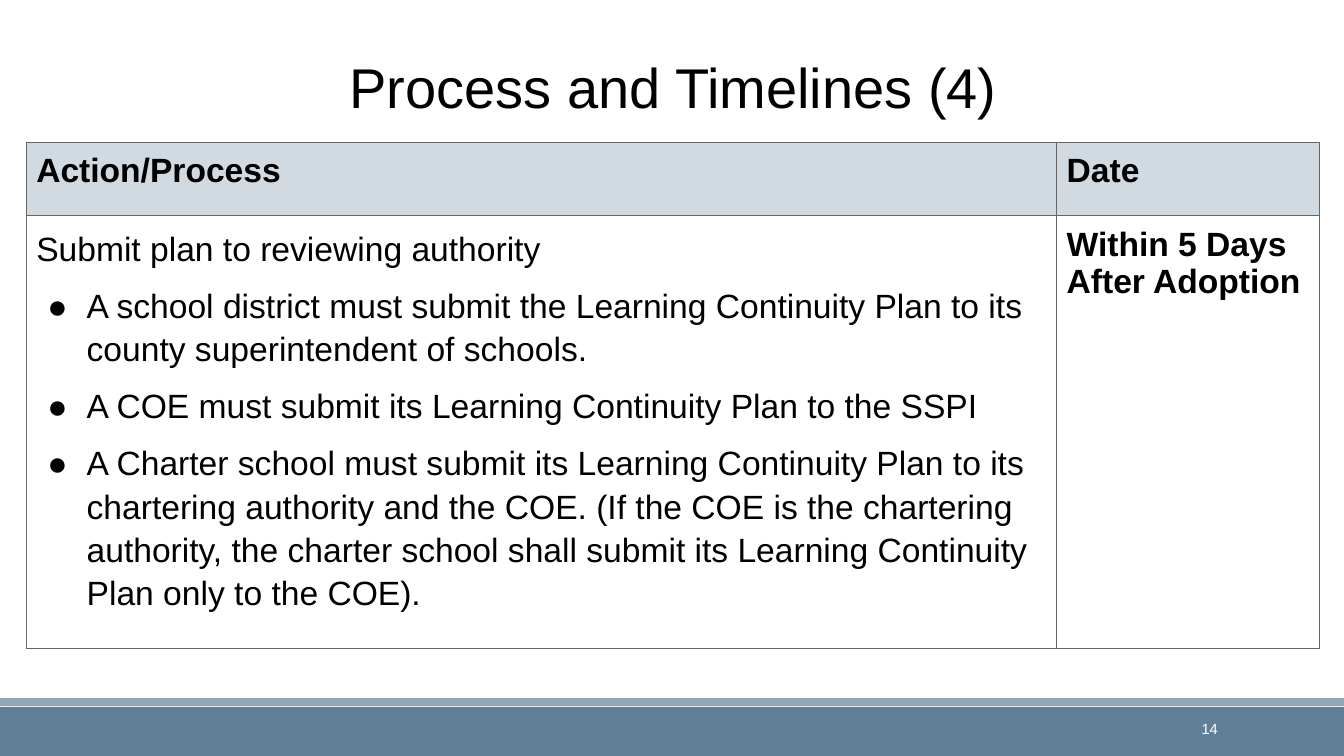
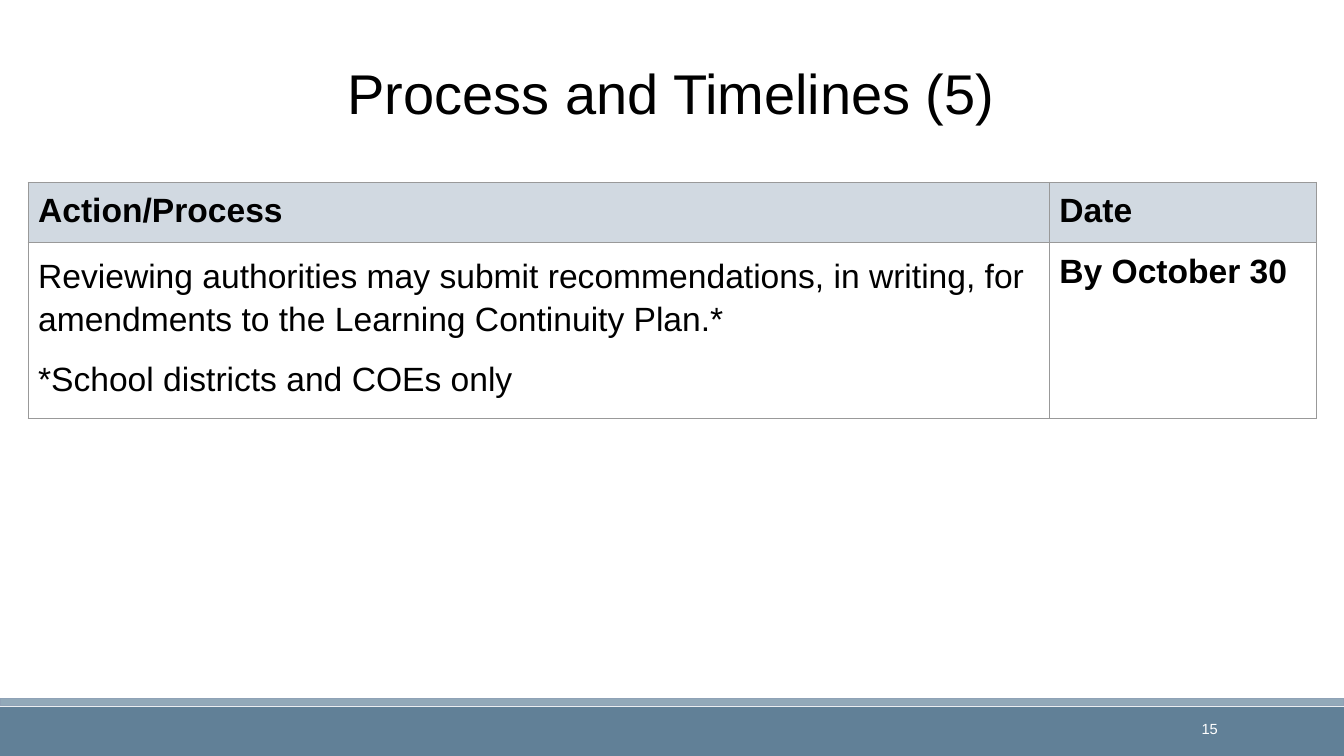
from lxml import etree
from pptx import Presentation
from pptx.dml.color import RGBColor
from pptx.enum.shapes import MSO_SHAPE
from pptx.enum.text import MSO_ANCHOR, PP_ALIGN
from pptx.oxml.ns import qn
from pptx.util import Pt

RECTANGLE = MSO_SHAPE.RECTANGLE
MIDDLE, BOTTOM = MSO_ANCHOR.MIDDLE, MSO_ANCHOR.BOTTOM
CENTER, RIGHT = PP_ALIGN.CENTER, PP_ALIGN.RIGHT

BLACK = RGBColor(0x00, 0x00, 0x00)
WHITE = RGBColor(0xFF, 0xFF, 0xFF)
FOOTER_BLUE = RGBColor(0x61, 0x80, 0x97)
STRIP_BLUE = RGBColor(0x92, 0xA9, 0xB9)
STRIP_EDGE = RGBColor(0x8F, 0xA2, 0xB6)
HEADER_FILL = RGBColor(0xD1, 0xD9, 0xE1)
DARK_GRAY = RGBColor(0x66, 0x66, 0x66)
LIGHT_GRAY = RGBColor(0x99, 0x99, 0x99)

FONT = "Arial"
SLIDE_WIDTH, SLIDE_HEIGHT = 960, 540
FOOTER_TOP, STRIP_TOP = 505, 499
CELL_INSET = 7.2
BULLET_INDENT, BULLET_HANG = 36, 28

HEADERS = ("Action/Process", "Date")
# Each action paragraph is (text, bulleted, space before in points).
SLIDES = [
    {
        "title": "Process and Timelines (4)",
        "title_box": (18.72, 10, 924, 79.2),
        "number": "14",
        "table_at": (18.72, 101.5),
        "columns": (736, 188),
        "rows": (52.5, 291),
        "border": DARK_GRAY,
        "action": [
            ("Submit plan to reviewing authority", False, 0),
            ("A school district must submit the Learning Continuity Plan to its "
             "county superintendent of schools.", True, 10),
            ("A COE must submit its Learning Continuity Plan to the SSPI", True, 10),
            ("A Charter school must submit its Learning Continuity Plan to its "
             "chartering authority and the COE. (If the COE is the chartering "
             "authority, the charter school shall submit its Learning Continuity "
             "Plan only to the COE).", True, 10),
        ],
        "date": "Within 5 Days After Adoption",
    },
    {
        "title": "Process and Timelines (5)",
        "title_box": (15.84, 14.4, 926.6, 79.2),
        "number": "15",
        "table_at": (20, 130.2),
        "columns": (729.5, 191),
        "rows": (41.2, 118.5),
        "border": LIGHT_GRAY,
        "action": [
            ("Reviewing authorities may submit recommendations, in writing, for "
             "amendments to the Learning Continuity Plan.*", False, 0),
            ("*School districts and COEs only", False, 12),
        ],
        "date": "By October 30",
    },
]


def add_span(para, text, size, color=BLACK, bold=False):
    span = para.add_run()
    span.text = text
    span.font.name = FONT
    span.font.size = Pt(size)
    span.font.bold = bold
    span.font.color.rgb = color


def add_band(page, top, height, color):
    band = page.shapes.add_shape(RECTANGLE, 0, Pt(top), Pt(SLIDE_WIDTH), Pt(height))
    band.shadow.inherit = False
    band.fill.solid()
    band.fill.fore_color.rgb = color
    band.line.fill.background()
    return band


def add_text(page, place, text, size, color, align, anchor):
    box = page.shapes.add_textbox(*map(Pt, place))
    frame = box.text_frame
    frame.word_wrap = True
    frame.vertical_anchor = anchor
    para = frame.paragraphs[0]
    para.alignment = align
    add_span(para, text, size, color)
    return para


def add_bullet(para):
    properties = para._p.get_or_add_pPr()
    properties.set("marL", str(Pt(BULLET_INDENT)))
    properties.set("indent", str(-Pt(BULLET_HANG)))
    color = etree.SubElement(properties, qn("a:buClr"))
    etree.SubElement(color, qn("a:srgbClr"), val=str(BLACK))
    etree.SubElement(properties, qn("a:buFont"), typeface=FONT)
    etree.SubElement(properties, qn("a:buChar"), char="●")


def style_cell(cell, border, fill=None):
    """Set insets, then the four borders, which must precede the fill in the XML."""
    cell.margin_left = cell.margin_right = Pt(CELL_INSET)
    cell.margin_top = cell.margin_bottom = Pt(CELL_INSET)
    properties = cell._tc.get_or_add_tcPr()
    for side in ("lnL", "lnR", "lnT", "lnB"):
        line = etree.SubElement(properties, qn(f"a:{side}"), w=str(Pt(0.75)))
        solid = etree.SubElement(line, qn("a:solidFill"))
        etree.SubElement(solid, qn("a:srgbClr"), val=str(border))
    if fill is None:
        cell.fill.background()
    else:
        cell.fill.solid()
        cell.fill.fore_color.rgb = fill


def add_timeline(page, content):
    columns, rows = content["columns"], content["rows"]
    left, top = content["table_at"]
    table = page.shapes.add_table(len(rows), len(columns), Pt(left), Pt(top),
                                  Pt(sum(columns)), Pt(sum(rows))).table
    table.horz_banding = False
    for column, width in zip(table.columns, columns):
        column.width = Pt(width)
    for row, height in zip(table.rows, rows):
        row.height = Pt(height)

    for index, header in enumerate(HEADERS):
        cell = table.cell(0, index)
        style_cell(cell, content["border"], HEADER_FILL)
        add_span(cell.text_frame.paragraphs[0], header, 24, bold=True)

    action, date = table.cell(1, 0), table.cell(1, 1)
    style_cell(action, content["border"])
    style_cell(date, content["border"])
    frame = action.text_frame
    for index, (text, bulleted, gap) in enumerate(content["action"]):
        para = frame.add_paragraph() if index else frame.paragraphs[0]
        if bulleted:
            add_bullet(para)
        para.line_spacing = 1.15
        para.space_before = Pt(gap)
        add_span(para, text, 24)
    add_span(date.text_frame.paragraphs[0], content["date"], 24, bold=True)


def add_page(deck, content):
    page = deck.slides.add_slide(deck.slide_layouts[6])
    add_band(page, FOOTER_TOP, SLIDE_HEIGHT - FOOTER_TOP, FOOTER_BLUE)
    strip = add_band(page, STRIP_TOP, 5, STRIP_BLUE)
    strip.line.color.rgb = STRIP_EDGE
    strip.line.width = Pt(1.25)
    title = add_text(page, content["title_box"], content["title"], 40, BLACK,
                     CENTER, BOTTOM)
    title.line_spacing = 0.85
    add_timeline(page, content)
    add_text(page, (774, 506.2, 103, 28.8), content["number"], 10.5, WHITE,
             RIGHT, MIDDLE)


def main():
    deck = Presentation()
    deck.slide_width, deck.slide_height = Pt(SLIDE_WIDTH), Pt(SLIDE_HEIGHT)
    for content in SLIDES:
        add_page(deck, content)
    deck.save("out.pptx")


if __name__ == "__main__":
    main()
